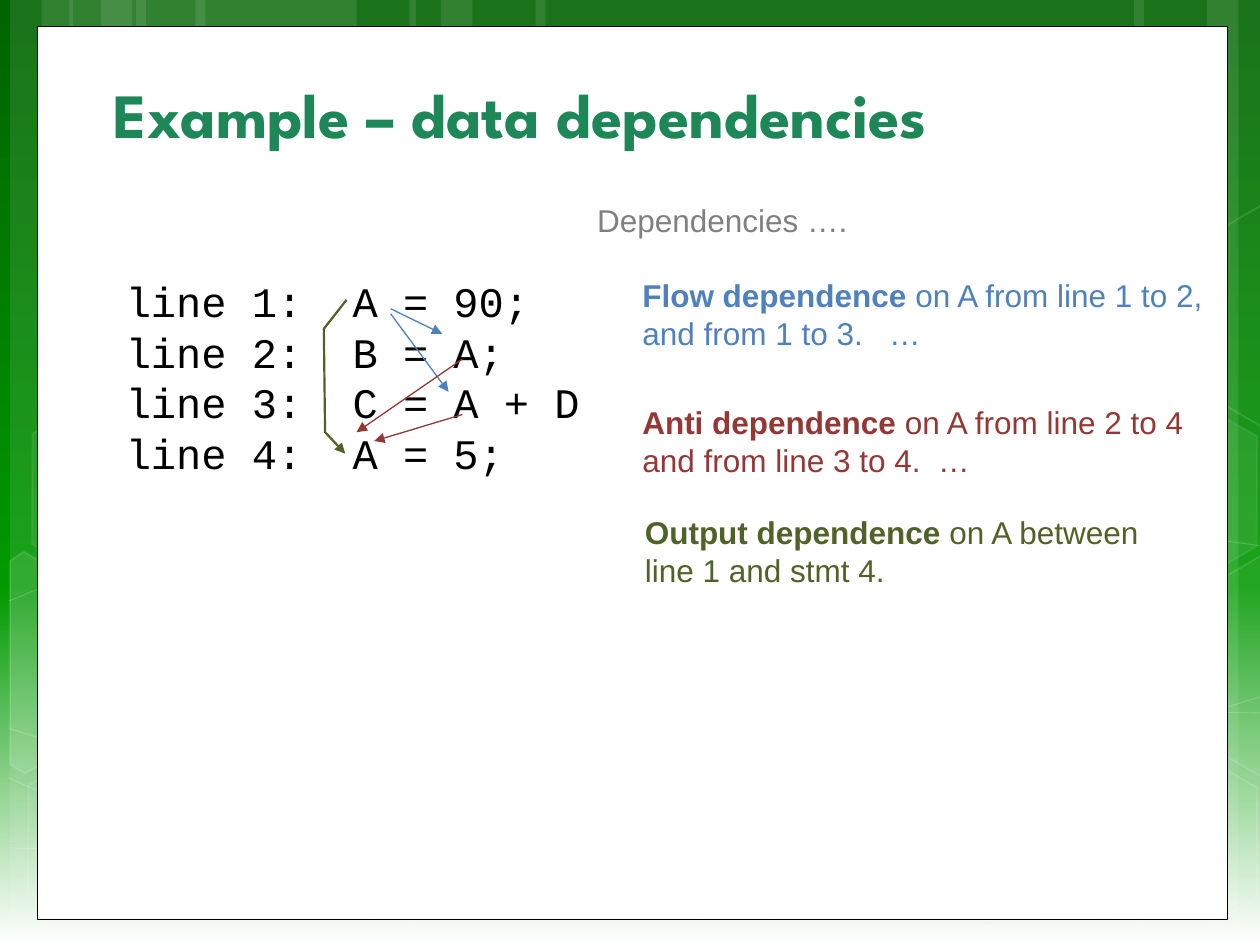
from copy import deepcopy
from dataclasses import dataclass

from pptx import Presentation
from pptx.dml.color import RGBColor
from pptx.enum.shapes import MSO_CONNECTOR, MSO_SHAPE
from pptx.enum.text import MSO_ANCHOR, MSO_AUTO_SIZE, PP_ALIGN
from pptx.oxml.ns import qn
from pptx.oxml.xmlchemy import OxmlElement
from pptx.util import Inches, Pt

RECT, HEXAGON = MSO_SHAPE.RECTANGLE, MSO_SHAPE.HEXAGON
STRAIGHT = MSO_CONNECTOR.STRAIGHT
TOP, BOTTOM = MSO_ANCHOR.TOP, MSO_ANCHOR.BOTTOM
LEFT = PP_ALIGN.LEFT
NO_FIT = MSO_AUTO_SIZE.NONE


@dataclass(frozen=True)
class Theme:
    """Colours, fonts and type sizes of the slide."""
    white: str = "FFFFFF"
    black: str = "000000"
    title: str = "1D8757"
    muted: str = "808080"
    flow: str = "4F81BD"
    anti: str = "953735"
    output: str = "4F6228"
    backdrop: tuple = ((0, "006400"), (0.62, "009900"), (1, "FFFFFF"))
    title_font: str = "League Spartan"
    body_font: str = "Arial"
    code_font: str = "Courier New"
    title_size: int = 36
    code_size: int = 24
    body_size: int = 18


THEME = Theme()
SLIDE = (0, 0, 10, 7.5)
PANEL = (0.3, 0.21, 9.44, 7.09)
TITLE = (0.8, 0.49, 8.42, 0.76)
CODE = (0.9, 2.14, 5, 1.72)
CAPTION = (4.64, 1.55, 2.21, 0.4)

BANDS = [(1.08, 1.75), (0.08, 0.5), (0.33, 0.83), (1.55, 1.75), (0.55, 0.5), (0.8, 0.83),
         (7.33, 1.75), (9.58, 0.5), (9, 0.83), (4.25, 3.08), (3.25, 0.5), (3.5, 0.83)]
WAVES = [
    [(0.07, 6.73), (1.9, 6.78), (4.58, 6.65), (7.92, 6.17), (10.07, 5.51)],
    [(0.07, 4.77), (1.21, 4.31), (3.47, 3.87), (6.54, 3.87), (10.07, 4.34)],
    [(0.06, 6.17), (1.7, 6.89), (3.34, 7.49)],
    [(0.07, 5.78), (1.28, 6.16), (3.57, 6.73), (6.28, 7.18), (8.53, 7.36), (10.07, 7.34)],
    [(2.42, 7.49), (3.02, 6.91), (3.88, 6.39), (4.7, 6.09), (6.08, 5.78), (7.94, 5.62), (10.06, 5.66)],
]
HEXAGONS = [(4.97, 5.89, 6, 12), (0.11, 5.91, 0, 12), (0.14, 3.12, 7, 8),
            (1.74, 5.92, 0, 12), (8.34, 5.93, 0, 12), (8.34, 3.14, 7, 8)]
CUT_HEXAGONS = [
    ([(0.08, 4.45), (0.19, 4.38), (0.96, 4.82), (0.95, 5.7), (0.2, 6.14), (0.08, 6.07)], 10),
    ([(9.26, 4.85), (10.01, 4.41), (10.09, 4.46), (10.09, 6.13), (10.02, 6.17), (9.26, 5.73)], 4),
    ([(9.26, 2.07), (10.01, 1.63), (10.1, 1.68), (10.09, 3.35), (10.02, 3.39), (9.26, 2.95)], 0),
]
CODE_LINES = ["line 1:  A = 90;", "line 2:  B = A;", "line 3:  C = A + D", "line 4:  A = 5;"]
DEPENDENCIES = [
    ((5, 2.14, 5, 0.71), THEME.flow, "Flow dependence",
     " on A from line 1 to 2, and from 1 to 3.   …", 0.75,
     [[(2.2, 0.31), (2.61, 0.51)], [(2.2, 0.35), (2.66, 0.97)]]),
    ((5, 3.15, 4.54, 0.71), THEME.anti, "Anti dependence",
     " on A from line 2 to 4 and from line 3 to 4.  …", 0.75,
     [[(2.77, 0.71), (1.93, 1.29)], [(2.77, 1.15), (2.07, 1.36)]]),
    ((5.02, 4.02, 4.2, 0.71), THEME.output, "Output dependence",
     " on A between line 1 and stmt 4.", 1.25,
     [[(1.85, 0.24), (1.67, 0.47), (1.68, 1.29), (1.84, 1.46)]]),
]


def inches(values):
    """Turn numbers into lengths."""
    return [Inches(v) for v in values]


def rgb(color):
    """Turn a hex string into a colour."""
    return RGBColor.from_string(color)


def set_values(target, values):
    """Set each named attribute on the target."""
    for name, value in values.items():
        setattr(target, name, value)


def set_alpha(sp, tag, percent):
    """Make the solid colour under the given tag of a shape translucent."""
    parent = sp._element.spPr if tag is None else sp._element.spPr.find(qn(tag))
    alpha = OxmlElement("a:alpha")
    alpha.set("val", str(percent * 1000))
    parent.find(qn("a:solidFill"))[0].append(alpha)


def paint(sp, fill=None, fill_alpha=100, line=None, width=1, line_alpha=100):
    """Give a shape its fill and outline."""
    sp.shadow.inherit = False
    if fill and fill_alpha:
        sp.fill.solid()
        sp.fill.fore_color.rgb = rgb(fill)
        if fill_alpha < 100:
            set_alpha(sp, None, fill_alpha)
    else:
        sp.fill.background()
    if line:
        sp.line.color.rgb = rgb(line)
        sp.line.width = Pt(width)
        if line_alpha < 100:
            set_alpha(sp, "a:ln", line_alpha)
    else:
        sp.line.fill.background()


def add_outline(slide, points, close=False):
    """Draw a freeform through the points."""
    start, *rest = [inches(point) for point in points]
    builder = slide.shapes.build_freeform(*start)
    builder.add_line_segments(rest, close=close)
    return builder.convert_to_shape()


def add_run(p, text, font, size, color, bold=False):
    """Add one formatted run to a paragraph."""
    r = p.add_run()
    r.text = text
    set_values(r.font, {"name": font, "size": Pt(size), "bold": bold})
    r.font.color.rgb = rgb(color)


def add_text(slide, box, paragraphs, wrap=True):
    """Add a text box whose paragraphs are lists of run arguments."""
    tf = slide.shapes.add_textbox(*inches(box)).text_frame
    set_values(tf, {"word_wrap": wrap, "auto_size": NO_FIT, "vertical_anchor": TOP})
    for i, runs in enumerate(paragraphs):
        p = tf.add_paragraph() if i else tf.paragraphs[0]
        p.alignment = LEFT
        for run in runs:
            add_run(p, *run)


def add_arrow(slide, box, points, color, width):
    """Draw an arrow along points measured from the corner of the box."""
    points = [(box[0] + x, box[1] + y) for x, y in points]
    if len(points) == 2:
        sp = slide.shapes.add_connector(STRAIGHT, *inches(points[0] + points[1]))
        sp.line.color.rgb = rgb(color)
        sp.line.width = Pt(width)
        sp._element.spPr.append(OxmlElement("a:effectLst"))
    else:
        sp = add_outline(slide, points)
        paint(sp, line=color, width=width)
    tail = OxmlElement("a:tailEnd")
    tail.set("type", "triangle")
    sp._element.spPr.find(qn("a:ln")).append(tail)


def add_backdrop(slide, box):
    """Fill the background and lay bands, waves and hexagons over it."""
    left, top, _, height = box
    fill = slide.background.fill
    fill.gradient()
    fill.gradient_angle = 270
    stops = slide._element.find(".//" + qn("a:gsLst"))
    stops.append(deepcopy(stops[-1]))
    for stop, (position, color) in zip(fill.gradient_stops, THEME.backdrop):
        stop.position = position
        stop.color.rgb = rgb(color)
    for x, width in BANDS:
        band = slide.shapes.add_shape(RECT, *inches((left + x, top, width, height)))
        paint(band, THEME.white, 10)
    for points in WAVES:
        wave = add_outline(slide, [(left + x, top + y) for x, y in points])
        paint(wave, line=THEME.white, width=0.5, line_alpha=20)
    for x, y, alpha, line_alpha in HEXAGONS:
        sp = slide.shapes.add_shape(HEXAGON, *inches((left + x, top + y, 1.75, 1.52)))
        sp.rotation = 30
        sp.adjustments[0] = 0.285
        paint(sp, THEME.white, alpha, THEME.white, 1, line_alpha)
    for points, alpha in CUT_HEXAGONS:
        sp = add_outline(slide, [(left + x, top + y) for x, y in points], close=True)
        paint(sp, THEME.white, alpha, THEME.white, 1, 12)


def add_panel(slide, box):
    """Add the white panel that carries the content."""
    paint(slide.shapes.add_shape(RECT, *inches(box)), THEME.white, line=THEME.black, width=0.5)


def add_title(slide, box, text):
    """Place the title placeholder in front of the panel."""
    title = slide.shapes.title
    slide.shapes._spTree.append(title._element)
    set_values(title, dict(zip(("left", "top", "width", "height"), inches(box))))
    tf = title.text_frame
    set_values(tf, {"word_wrap": True, "auto_size": NO_FIT, "vertical_anchor": BOTTOM})
    p = tf.paragraphs[0]
    p.alignment = LEFT
    add_run(p, text, THEME.title_font, THEME.title_size, THEME.title, True)


def add_code(slide, box):
    """Add the code listing."""
    add_text(slide, box, [[(line, THEME.code_font, THEME.code_size, THEME.black)]
                          for line in CODE_LINES])


def add_dependence(slide, box, code_box, color, name, detail, width, arrows):
    """Add one explanation and its arrows over the code."""
    style = (THEME.body_font, THEME.body_size, color)
    add_text(slide, box, [[(name, *style, True), (detail, *style)]])
    for points in arrows:
        add_arrow(slide, code_box, points, color, width)


def main():
    """Build and save the slide."""
    prs = Presentation()
    prs.slide_width, prs.slide_height = inches(SLIDE[2:])
    slide = prs.slides.add_slide(prs.slide_layouts[5])
    add_backdrop(slide, SLIDE)
    add_panel(slide, PANEL)
    add_title(slide, TITLE, "Example – data dependencies")
    add_code(slide, CODE)
    add_text(slide, CAPTION,
             [[("Dependencies ….", THEME.body_font, THEME.body_size, THEME.muted)]], wrap=False)
    for box, *details in DEPENDENCIES:
        add_dependence(slide, box, CODE, *details)
    prs.save("out.pptx")


if __name__ == "__main__":
    main()
